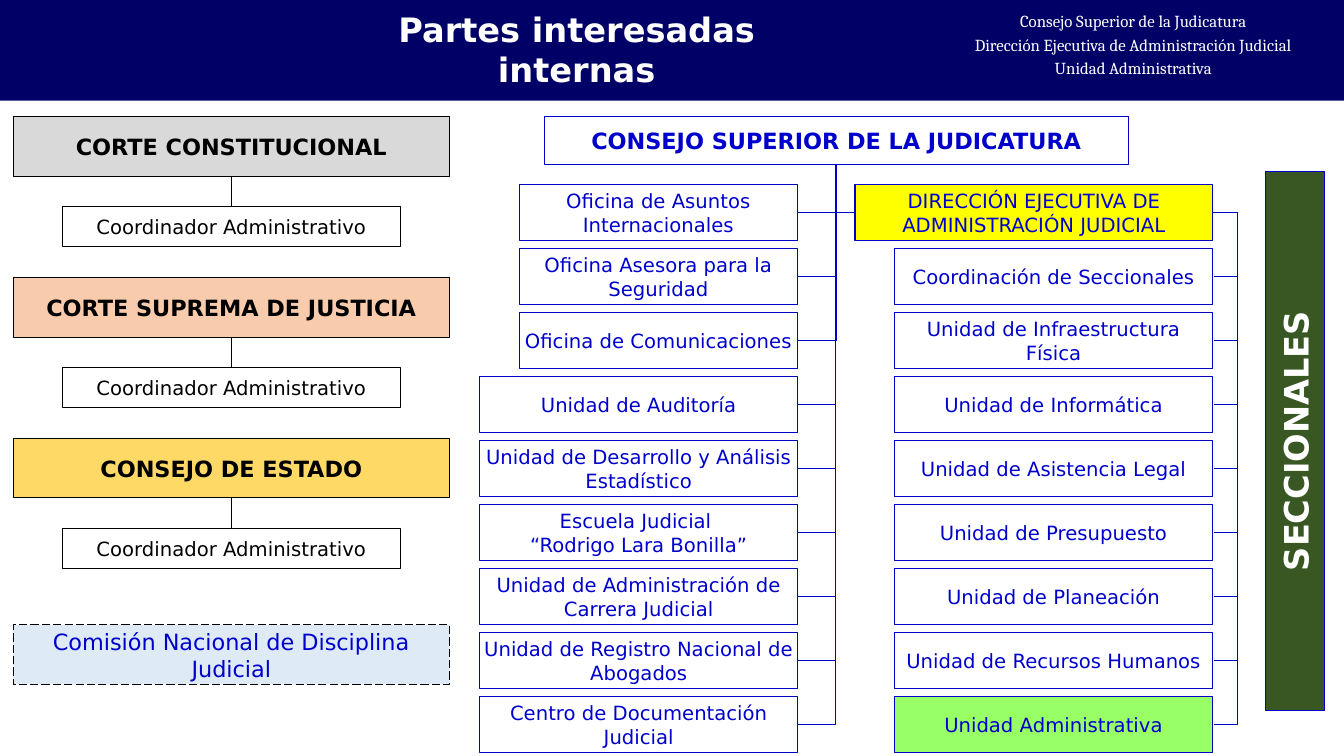
from lxml.etree import SubElement
from pptx import Presentation
from pptx.dml.color import RGBColor
from pptx.enum.dml import MSO_LINE
from pptx.enum.shapes import MSO_CONNECTOR, MSO_SHAPE
from pptx.enum.text import MSO_ANCHOR, PP_ALIGN
from pptx.oxml.ns import qn
from pptx.util import Inches, Pt

NAVY = RGBColor(0x00, 0x00, 0x66)
BLUE = RGBColor(0x00, 0x00, 0xCC)
WHITE = RGBColor(0xFF, 0xFF, 0xFF)
BLACK = RGBColor(0x00, 0x00, 0x00)
GREY = RGBColor(0xD9, 0xD9, 0xD9)
PEACH = RGBColor(0xF8, 0xCB, 0xAD)
GOLD = RGBColor(0xFF, 0xD9, 0x66)
PALE = RGBColor(0xDE, 0xEB, 0xF7)
YELLOW = RGBColor(0xFF, 0xFF, 0x00)
LIME = RGBColor(0x99, 0xFF, 0x66)
GREEN = RGBColor(0x38, 0x57, 0x23)

SANS = "DejaVu Sans"
BOX_H = 0.56
PITCH = 5.08 / 8  # nine rows of offices
STEP = 3.19 / 2  # three courts
TOP, BOTTOM = 0, 2  # connection sites of a rectangle

COURTS = [
    ("CORTE CONSTITUCIONAL", GREY),
    ("CORTE SUPREMA DE JUSTICIA", PEACH),
    ("CONSEJO DE ESTADO", GOLD),
]
OFFICES = [
    "Oficina de Asuntos Internacionales",
    "Oficina Asesora para la Seguridad",
    "Oficina de Comunicaciones",
    "Unidad de Auditoría",
    "Unidad de Desarrollo y Análisis Estadístico",
    "Escuela Judicial \n“Rodrigo Lara Bonilla”",
    "Unidad de Administración de Carrera Judicial",
    "Unidad de Registro Nacional de Abogados",
    "Centro de Documentación Judicial",
]
UNITS = [
    "Coordinación de Seccionales",
    "Unidad de Infraestructura Física",
    "Unidad de Informática",
    "Unidad de Asistencia Legal",
    "Unidad de Presupuesto",
    "Unidad de Planeación",
    "Unidad de Recursos Humanos",
    "Unidad Administrativa",
]


def write(frame, text, size, color, bold=False, face=SANS, before=0):
    frame.word_wrap = True
    frame.text = text
    for para in frame.paragraphs:
        para.alignment = PP_ALIGN.CENTER
        para.space_before = Pt(before)
        para.font.name = face
        para.font.size = Pt(size)
        para.font.bold = bold
        para.font.color.rgb = color


def add_box(slide, x, y, w, h, text, size=14, color=BLUE, fill=None,
            edge=BLUE, bold=False):
    box = slide.shapes.add_shape(
        MSO_SHAPE.RECTANGLE, Inches(x), Inches(y), Inches(w), Inches(h))
    box.shadow.inherit = False
    if fill is None:
        box.fill.background()
    else:
        box.fill.solid()
        box.fill.fore_color.rgb = fill
    box.line.color.rgb = edge
    box.line.width = Pt(0.75)
    frame = box.text_frame
    frame.margin_left = frame.margin_right = Inches(0.04)
    frame.margin_top = frame.margin_bottom = Inches(0.04)
    frame.vertical_anchor = MSO_ANCHOR.MIDDLE
    write(frame, text, size, color, bold)
    return box


def add_line(slide, x1, y1, x2, y2, color=BLUE, width=0.75,
             kind=MSO_CONNECTOR.STRAIGHT):
    line = slide.shapes.add_connector(
        kind, Inches(x1), Inches(y1), Inches(x2), Inches(y2))
    line.line.color.rgb = color
    line.line.width = Pt(width)
    SubElement(line._element.spPr, qn("a:effectLst"))
    return line


def add_elbow(slide, x1, y1, x2, y2, width=0.75):
    """One bend: down from the first point, then sideways to the second."""
    mid_x, mid_y = (x1 + x2) / 2, (y1 + y2) / 2
    half_w, half_h = (y2 - y1) / 2, abs(x2 - x1) / 2
    line = add_line(slide, mid_x - half_w, mid_y - half_h,
                    mid_x + half_w, mid_y + half_h, width=width,
                    kind=MSO_CONNECTOR.ELBOW)
    shape = line._element.spPr
    shape.find(qn("a:prstGeom")).set("prst", "bentConnector2")
    frame = shape.find(qn("a:xfrm"))
    if x2 < x1:
        frame.set("rot", "5400000")
    else:
        frame.set("rot", "16200000")
        frame.set("flipH", "1")


def add_loop(slide, x, y1, y2, reach):
    """Two bends: out to the right by reach, down, and back."""
    gap = 0.01
    line = add_line(slide, x, y1, x + gap, y2, width=0.5,
                    kind=MSO_CONNECTOR.ELBOW)
    guides = line._element.spPr.find(qn("a:prstGeom")).get_or_add_avLst()
    SubElement(guides, qn("a:gd"), name="adj1",
               fmla=f"val {round(reach / gap * 100000)}")


def add_header(slide, x, y, w, h):
    band = slide.shapes.add_shape(
        MSO_SHAPE.RECTANGLE, Inches(x), Inches(y), Inches(w), Inches(h))
    band.shadow.inherit = False
    band.fill.solid()
    band.fill.fore_color.rgb = NAVY
    band.line.fill.background()
    office = slide.shapes.add_textbox(
        Inches(x + 9.37), Inches(y + 0.06), Inches(3.74), Inches(0.82))
    write(office.text_frame,
          "Consejo Superior de la Judicatura\n"
          "Dirección Ejecutiva de Administración Judicial\n"
          "Unidad Administrativa", 12, WHITE, face="Cambria", before=2.4)
    title = slide.shapes.add_textbox(
        Inches(x + 2.74), Inches(y + 0.04), Inches(5.96), Inches(0.91))
    write(title.text_frame, "Partes interesadas\ninternas", 24, WHITE, True)


def add_court(slide, x, y, w, name, fill):
    """A court with its coordinator hanging below."""
    court = add_box(slide, x, y, w, 0.59, name, 16, BLACK, fill, BLACK, True)
    aide = add_box(slide, x + 0.49, y + 0.89, w - 0.98, 0.4,
                   "Coordinador Administrativo", 14, BLACK, edge=BLACK)
    line = add_line(slide, x, y, x, y, BLACK, 0.5)
    line.begin_connect(court, BOTTOM)
    line.end_connect(aide, TOP)


def add_courts(slide, x, y, w):
    for i, (name, fill) in enumerate(COURTS):
        add_court(slide, x, y + i * STEP, w, name, fill)
    board = add_box(slide, x, y + 5.04, w, 0.59,
                    "Comisión Nacional de Disciplina Judicial", 16,
                    fill=PALE, edge=BLACK)
    board.line.dash_style = MSO_LINE.LONG_DASH


def add_offices(slide, x, y, w, trunk, start):
    """Offices flush right, each joined to the trunk on their right."""
    for i, name in enumerate(OFFICES):
        inset = 0.39 if i < 3 else 0
        top = y + i * PITCH
        add_box(slide, x + inset, top, w - inset, BOX_H, name)
        add_elbow(slide, trunk, start, x + w, top + BOX_H / 2,
                  0.5 if i < 3 else 0.75)


def add_units(slide, x, y, w, trunk, start):
    """The executive office and the units looped to its right side."""
    mid = y + BOX_H / 2
    add_elbow(slide, trunk, start, x, mid)
    add_box(slide, x, y, w, BOX_H,
            "DIRECCIÓN EJECUTIVA DE ADMINISTRACIÓN JUDICIAL", fill=YELLOW)
    for i, name in enumerate(UNITS, 1):
        fill = LIME if i == len(UNITS) else None
        add_box(slide, x + 0.39, y + i * PITCH, w - 0.39, BOX_H, name,
                fill=fill)
        add_loop(slide, x + w, mid, mid + i * PITCH, 0.25)


def add_council(slide, x, y):
    trunk, start, rows = x + 3.53, y + 0.47, y + 0.67
    add_box(slide, x + 0.64, y, 5.79, 0.47,
            "CONSEJO SUPERIOR DE LA JUDICATURA", 16, bold=True)
    add_offices(slide, x, rows, 3.15, trunk, start)
    add_units(slide, x + 3.72, rows, 3.55, trunk, start)


def add_banner(slide, x, y, w, h):
    """A tall box whose text reads upwards."""
    box = add_box(slide, x + (w - h) / 2, y + (h - w) / 2, h, w,
                  "SECCIONALES", 24, WHITE, GREEN, bold=True)
    box.rotation = 270


def main():
    deck = Presentation()
    deck.slide_width, deck.slide_height = Inches(13.33), Inches(7.5)
    slide = deck.slides.add_slide(deck.slide_layouts[6])
    add_header(slide, 0, 0, 13.33, 1)
    add_council(slide, 4.76, 1.16)
    add_courts(slide, 0.13, 1.16, 4.33)
    add_banner(slide, 12.55, 1.7, 0.59, 5.35)
    deck.save("out.pptx")


if __name__ == "__main__":
    main()
